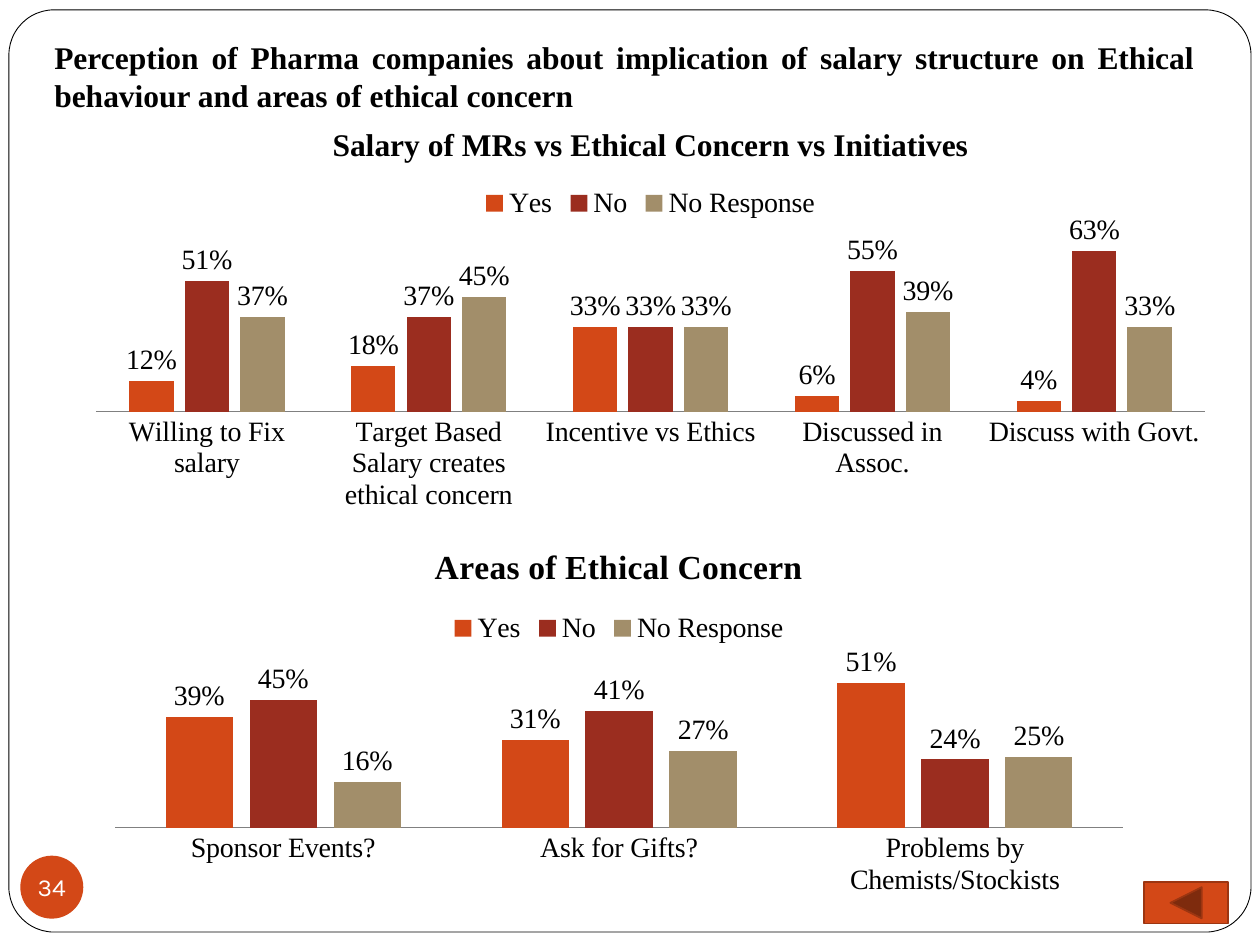
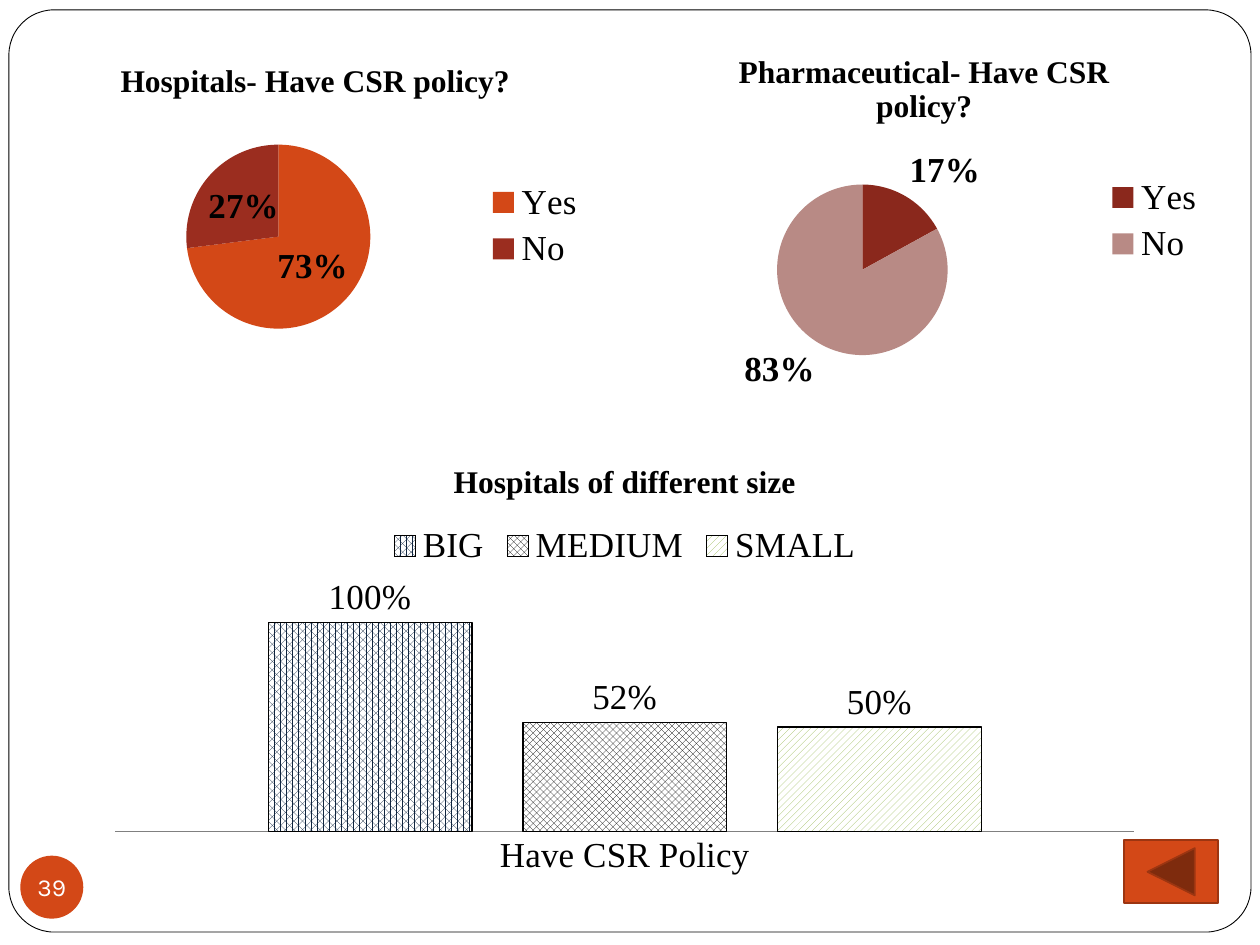
from pptx import Presentation
from pptx.chart.data import CategoryChartData
from pptx.dml.color import RGBColor
from pptx.enum.chart import XL_CHART_TYPE, XL_LABEL_POSITION, XL_LEGEND_POSITION, XL_TICK_MARK
from pptx.enum.dml import MSO_PATTERN
from pptx.enum.shapes import MSO_SHAPE
from pptx.enum.text import MSO_ANCHOR, MSO_AUTO_SIZE, PP_ALIGN
from pptx.oxml import parse_xml
from pptx.oxml.ns import nsdecls
from pptx.util import Cm, Pt

BLACK = RGBColor(0x00, 0x00, 0x00)
WHITE = RGBColor(0xFF, 0xFF, 0xFF)
ORANGE = RGBColor(0xD3, 0x48, 0x17)
RUST = RGBColor(0x9B, 0x2D, 0x1F)
TAN = RGBColor(0xA2, 0x8E, 0x6A)
BRICK = RGBColor(0x8A, 0x28, 0x1C)
ROSE = RGBColor(0xB8, 0x8A, 0x85)
NAVY = RGBColor(0x0F, 0x24, 0x3E)
GREEN = RGBColor(0x9B, 0xBB, 0x59)
BROWN = RGBColor(0x9C, 0x35, 0x11)
GREY = RGBColor(0x80, 0x80, 0x80)
SERIF, SANS = "Times New Roman", "Karla"

# Boxes are left, top, width, height in centimetres
FRAME_BOX = (0.18, 0.2, 25.04, 18.59)
BADGE_BOX = (0.41, 17.25, 1.27, 1.27)
TITLE_BOX = (0.84, 0.64, 23.5, 1.8)

ANSWER_FILLS = [ORANGE, RUST, TAN]
SIZE_FILLS = [
    (MSO_PATTERN.PERCENT_70, NAVY),
    (MSO_PATTERN.from_xml("openDmnd"), BLACK),
    (MSO_PATTERN.from_xml("wdUpDiag"), GREEN),
]

SLIDES = [
    {
        "number": "34",
        "title": "Perception of Pharma companies about implication of salary "
                 "structure on Ethical behaviour and areas of ethical concern",
        "back": (23.06, 17.78, 1.7, 0.84),
        "columns": [
            {
                "box": (1.47, 2.11, 23.29, 8.36),
                "title": "Salary of MRs vs Ethical Concern vs Initiatives",
                "title_size": 18, "size": 16, "fills": ANSWER_FILLS,
                "cats": ["Willing to Fix salary",
                         "Target Based Salary creates ethical concern",
                         "Incentive vs Ethics", "Discussed in Assoc.",
                         "Discuss with Govt."],
                "series": {
                    "Yes": [0.12, 0.18, 0.33, 0.06, 0.04],
                    "No": [0.51, 0.37, 0.33, 0.55, 0.63],
                    "No Response": [0.37, 0.45, 0.33, 0.39, 0.33],
                },
            },
            {
                "box": (1.9, 10.59, 21.16, 7.62),
                "title": "Areas of Ethical Concern",
                "title_size": 19.2, "size": 16, "fills": ANSWER_FILLS,
                "cats": ["Sponsor Events?", "Ask for Gifts?",
                         "Problems by Chemists/Stockists"],
                "series": {
                    "Yes": [0.39, 0.31, 0.51],
                    "No": [0.45, 0.41, 0.24],
                    "No Response": [0.16, 0.27, 0.25],
                },
            },
        ],
        "pies": [],
    },
    {
        "number": "39",
        "title": None,
        "back": (22.66, 16.94, 1.9, 1.27),
        "pies": [
            {
                "box": (0.64, 0.84, 11.43, 7.42),
                "title": "Hospitals- Have CSR policy?",
                "title_size": 18, "size": 20, "fills": [ORANGE, RUST],
                "cats": ["Yes", "No"], "series": {"Series 1": [73, 27]},
                "labels": XL_LABEL_POSITION.CENTER,
                "plot": {"x": 0.27, "y": 0.28, "w": 0.33, "h": 0.5},
            },
            {
                "box": (12.7, 0.64, 11.86, 7.62),
                "title": "Pharmaceutical- Have CSR policy?",
                "title_size": 18, "size": 20, "fills": [BRICK, ROSE],
                "cats": ["Yes", "No"], "series": {"Series 1": [17, 83]},
                "labels": XL_LABEL_POSITION.OUTSIDE_END,
                "plot": {"x": 0.25, "y": 0.4, "w": 0.29, "h": 0.46},
            },
        ],
        "columns": [
            {
                "box": (1.9, 8.89, 21.39, 8.94),
                "title": "Hospitals of different size",
                "title_size": 18, "size": 20, "fills": SIZE_FILLS,
                "cats": ["Have CSR Policy"],
                "series": {"BIG": [1], "MEDIUM": [0.52], "SMALL": [0.5]},
            },
        ],
    },
]


def cm_box(box):
    return [Cm(v) for v in box]


def set_font(font, color=BLACK, **values):
    for name, value in values.items():
        setattr(font, name, value)
    font.color.rgb = color


def add_box(s, kind, box, fill, line=None, width=1):
    sp = s.shapes.add_shape(kind, *cm_box(box))
    sp.shadow.inherit = False
    sp.fill.solid()
    sp.fill.fore_color.rgb = fill
    if line is None:
        sp.line.fill.background()
    else:
        sp.line.color.rgb = line
        sp.line.width = Pt(width)
    return sp


def add_frame(s):
    sp = add_box(s, MSO_SHAPE.ROUNDED_RECTANGLE, FRAME_BOX, WHITE, BLACK, 0.5)
    sp.adjustments[0] = 0.049
    s.shapes._spTree.insert(2, sp._element)  # behind the title


def add_badge(s, number):
    tf = add_box(s, MSO_SHAPE.OVAL, BADGE_BOX, ORANGE).text_frame
    for side in ("left", "right", "top", "bottom"):
        setattr(tf, f"margin_{side}", 0)
    tf.word_wrap = False
    tf.vertical_anchor = MSO_ANCHOR.MIDDLE
    p = tf.paragraphs[0]
    p.alignment = PP_ALIGN.CENTER
    r = p.add_run()
    r.text = number
    set_font(r.font, WHITE, name=SANS, size=Pt(14))


def fill_title(s, text):
    sp = s.shapes.title
    sp.left, sp.top, sp.width, sp.height = cm_box(TITLE_BOX)
    tf = sp.text_frame
    tf.word_wrap = True
    tf.auto_size = MSO_AUTO_SIZE.NONE
    tf.vertical_anchor = MSO_ANCHOR.TOP
    p = tf.paragraphs[0]
    p.alignment = PP_ALIGN.JUSTIFY
    r = p.add_run()
    r.text = text
    set_font(r.font, name=SERIF, size=Pt(18), bold=True)


def paint(fmt, fill):
    """Fill with a plain colour, or with an outlined (pattern, colour) pair."""
    if not isinstance(fill, tuple) or isinstance(fill, RGBColor):
        fmt.fill.solid()
        fmt.fill.fore_color.rgb = fill
        return
    pattern, color = fill
    fmt.fill.patterned()
    fmt.fill.pattern = pattern
    fmt.fill.fore_color.rgb = color
    fmt.fill.back_color.rgb = WHITE
    fmt.line.color.rgb = BLACK
    fmt.line.width = Pt(0.75)


def add_chart(s, kind, item, legend, number_format):
    data = CategoryChartData(number_format=number_format)
    data.categories = item["cats"]
    for name, values in item["series"].items():
        data.add_series(name, values)
    chart = s.shapes.add_chart(kind, *cm_box(item["box"]), data).chart
    set_font(chart.font, name=SERIF, size=Pt(item["size"]))

    chart.has_title = True
    p = chart.chart_title.text_frame.paragraphs[0]
    r = p.add_run()
    r.text = item["title"]
    set_font(r.font, name=SERIF, size=Pt(item["title_size"]), bold=True)

    chart.has_legend = True
    chart.legend.position = legend
    chart.legend.include_in_layout = False
    set_font(chart.legend.font, name=SERIF, size=Pt(item["size"]))
    plot = chart.plots[0]
    plot.has_data_labels = True
    labels = plot.data_labels
    labels.number_format = "0%"
    labels.number_format_is_linked = False
    set_font(labels.font, name=SERIF, size=Pt(item["size"]))
    return chart


def add_columns(s, item):
    chart = add_chart(s, XL_CHART_TYPE.COLUMN_CLUSTERED, item,
                      XL_LEGEND_POSITION.TOP, "0%")
    plot = chart.plots[0]
    plot.vary_by_categories = False
    plot.gap_width, plot.overlap = 150, -25
    plot.data_labels.show_value = True
    plot.data_labels.position = XL_LABEL_POSITION.OUTSIDE_END
    for series, fill in zip(plot.series, item["fills"]):
        series.invert_if_negative = False
        paint(series.format, fill)
    chart.value_axis.visible = False
    chart.value_axis.has_major_gridlines = False
    axis = chart.category_axis
    axis.major_tick_mark = XL_TICK_MARK.NONE
    axis.format.line.color.rgb = GREY
    axis.format.line.width = Pt(0.75)


def add_pie(s, item):
    chart = add_chart(s, XL_CHART_TYPE.PIE, item, XL_LEGEND_POSITION.RIGHT, "General")
    plot = chart.plots[0]
    plot.vary_by_categories = True
    labels = plot.data_labels
    labels.show_value, labels.show_percentage = False, True
    labels.position = item["labels"]
    labels.font.bold = True
    for i, fill in enumerate(item["fills"]):
        paint(plot.series[0].points[i].format, fill)
    place_plot(chart, item["plot"])


def place_plot(chart, place):
    """Fix the plot at fractions of the chart's width and height."""
    area = chart._chartSpace.chart.plotArea
    for old in area.findall("{*}layout"):
        area.remove(old)
    sizes = "".join(f'<c:{k} val="{v}"/>' for k, v in place.items())
    area.insert(0, parse_xml(
        f'<c:layout {nsdecls("c")}><c:manualLayout><c:layoutTarget val="inner"/>'
        f'<c:xMode val="edge"/><c:yMode val="edge"/>{sizes}'
        "</c:manualLayout></c:layout>"))


def main():
    prs = Presentation()
    prs.slide_width, prs.slide_height = Cm(25.4), Cm(19.05)
    title_only, blank = prs.slide_layouts[5], prs.slide_layouts[6]
    for item in SLIDES:
        s = prs.slides.add_slide(title_only if item["title"] else blank)
        add_frame(s)
        add_badge(s, item["number"])
        if item["title"]:
            fill_title(s, item["title"])
        for pie in item["pies"]:
            add_pie(s, pie)
        for columns in item["columns"]:
            add_columns(s, columns)
        add_box(s, MSO_SHAPE.ACTION_BUTTON_BACK_OR_PREVIOUS, item["back"], ORANGE, BROWN)
    prs.save("out.pptx")


if __name__ == "__main__":
    main()
